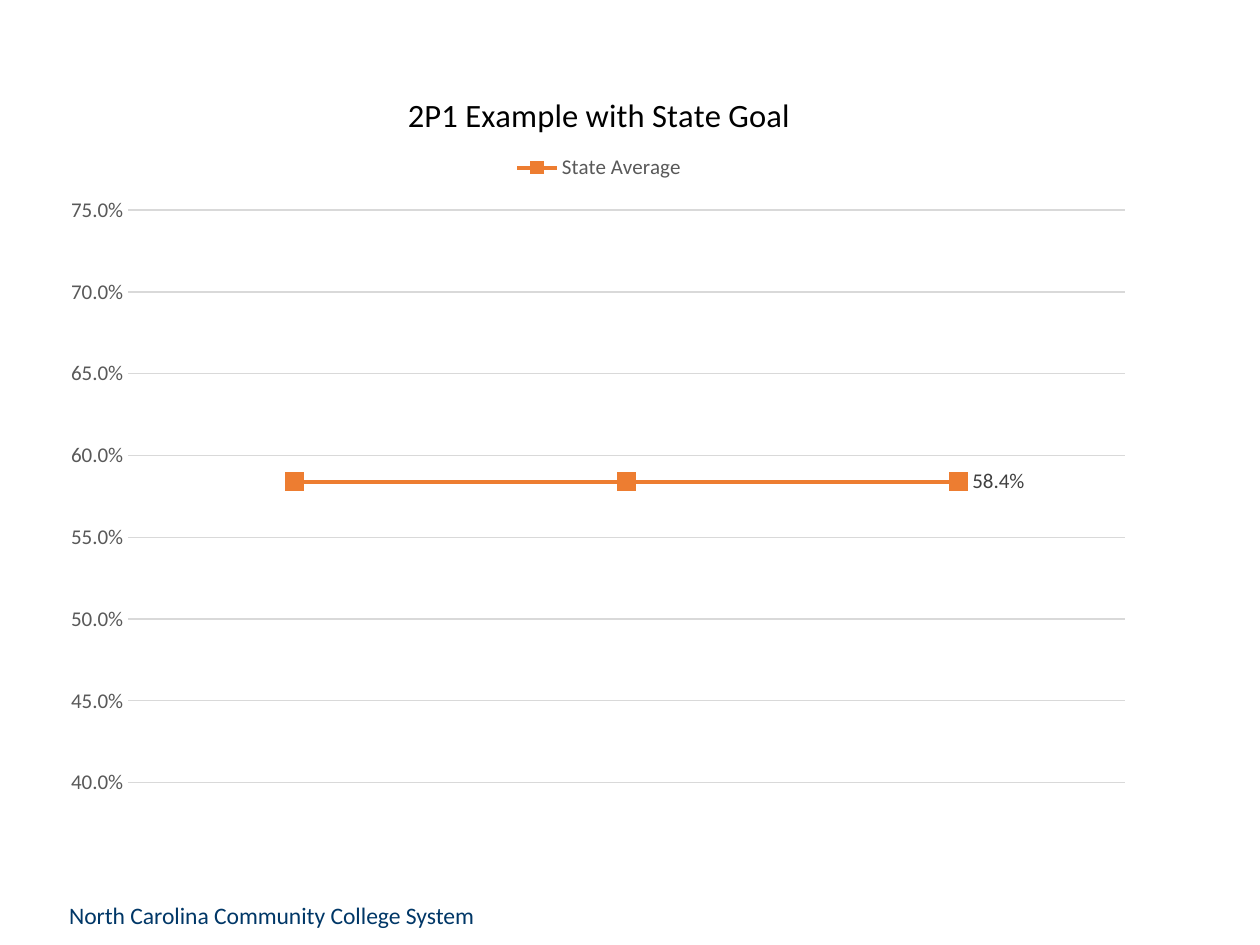
"""Build a slide with a line chart of the state average and a footer line."""
from typing import NamedTuple

import lxml.etree
import pptx
import pptx.chart.data
import pptx.dml.color
import pptx.enum.chart
import pptx.oxml.ns
import pptx.util

Inches = pptx.util.Inches
Pt = pptx.util.Pt
RGBColor = pptx.dml.color.RGBColor

FONT = "Calibri"
BLACK = RGBColor(0x00, 0x00, 0x00)
NAVY = RGBColor(0x00, 0x37, 0x67)
ORANGE = RGBColor(0xED, 0x7D, 0x31)
DARK_GRAY = RGBColor(0x40, 0x40, 0x40)
GRAY = RGBColor(0x59, 0x59, 0x59)
LIGHT_GRAY = RGBColor(0xD9, 0xD9, 0xD9)


class Area(NamedTuple):
    """Part of a chart with its place as fractions of the chart."""
    tag: str
    index: int
    edges: dict[str, float]


AREAS = [
    Area("c:title", 1, {"x": 0.32, "y": 0.04}),
    Area("c:legend", 1, {"x": 0.42, "y": 0.12, "w": 0.16, "h": 0.05}),
    Area("c:plotArea", 0, {"x": 0.07, "y": 0.2, "w": 0.91, "h": 0.74}),
]


def set_font(font, size: float, color: RGBColor) -> None:
    """Apply the slide font with a size and colour."""
    font.name = FONT
    font.size = Pt(size)
    font.bold = False
    font.color.rgb = color


def set_line(line, width: float, color: RGBColor) -> None:
    """Give a line its width and colour."""
    line.width = Pt(width)
    line.color.rgb = color


def place(chart, area: Area) -> None:
    """Give one part of the chart a manual layout."""
    qn = pptx.oxml.ns.qn
    parent = chart._chartSpace.find(".//" + qn(area.tag))
    for old in parent.findall(qn("c:layout")):
        parent.remove(old)
    layout = lxml.etree.Element(qn("c:layout"))
    manual = lxml.etree.SubElement(layout, qn("c:manualLayout"))
    settings = {"xMode": "edge", "yMode": "edge", **area.edges}
    if area.tag == "c:plotArea":
        settings = {"layoutTarget": "inner", **settings}
    for name, value in settings.items():
        lxml.etree.SubElement(manual, qn("c:" + name)).set("val", str(value))
    parent.insert(area.index, layout)


def format_axes(chart) -> None:
    """Format the category and value axes."""
    none = pptx.enum.chart.XL_TICK_MARK.NONE
    for axis in (chart.category_axis, chart.value_axis):
        axis.major_tick_mark = axis.minor_tick_mark = none
        set_font(axis.tick_labels.font, 12, GRAY)
    set_line(chart.category_axis.format.line, 0.75, LIGHT_GRAY)
    values = chart.value_axis
    values.minimum_scale, values.maximum_scale = 0.4, 0.75
    values.major_unit = 0.05
    values.tick_labels.number_format = "0.0%"
    values.tick_labels.number_format_is_linked = False
    values.format.line.fill.background()
    set_line(values.major_gridlines.format.line, 0.75, LIGHT_GRAY)


def format_series(series) -> None:
    """Format the line, its markers and the label of its last point."""
    series.smooth = False
    set_line(series.format.line, 2.25, ORANGE)
    marker = series.marker
    marker.style = pptx.enum.chart.XL_MARKER_STYLE.SQUARE
    marker.size = 10
    marker.format.fill.solid()
    marker.format.fill.fore_color.rgb = ORANGE
    marker.format.line.fill.background()
    label = series.points[2].data_label
    set_font(label.font, 12, DARK_GRAY)
    label.position = pptx.enum.chart.XL_LABEL_POSITION.RIGHT


def add_average_chart(s) -> None:
    """Add the state average chart."""
    data = pptx.chart.data.CategoryChartData(number_format="0.0%")
    data.categories = [" "] * 3
    data.add_series("State Average", [0.584] * 3)
    chart = s.shapes.add_chart(
        pptx.enum.chart.XL_CHART_TYPE.LINE_MARKERS,
        Inches(0.41), Inches(0.44), Inches(8.69), Inches(6.14), data).chart
    set_font(chart.font, 10, BLACK)
    chart.has_title = True
    tf = chart.chart_title.text_frame
    tf.text = "2P1 Example with State Goal"
    set_font(tf.paragraphs[0].runs[0].font, 18.6, BLACK)
    chart.has_legend = True
    chart.legend.position = pptx.enum.chart.XL_LEGEND_POSITION.TOP
    chart.legend.include_in_layout = False
    set_font(chart.legend.font, 12, GRAY)
    chart.plots[0].vary_by_categories = False
    format_axes(chart)
    format_series(chart.plots[0].series[0])
    for area in AREAS:
        place(chart, area)


def add_footer(s) -> None:
    """Add the name of the college system at the foot."""
    sp = s.shapes.add_textbox(Inches(0.45), Inches(7.1), Inches(3.55), Inches(0.4))
    tf = sp.text_frame
    tf.word_wrap = True
    tf.text = "North Carolina Community College System"
    set_font(tf.paragraphs[0].runs[0].font, 13.5, NAVY)


def main() -> None:
    """Build and save the presentation."""
    prs = pptx.Presentation()
    prs.slide_width, prs.slide_height = Inches(10), Inches(7.5)
    s = prs.slides.add_slide(prs.slide_layouts[6])
    add_footer(s)
    add_average_chart(s)
    prs.save("out.pptx")


if __name__ == "__main__":
    main()
